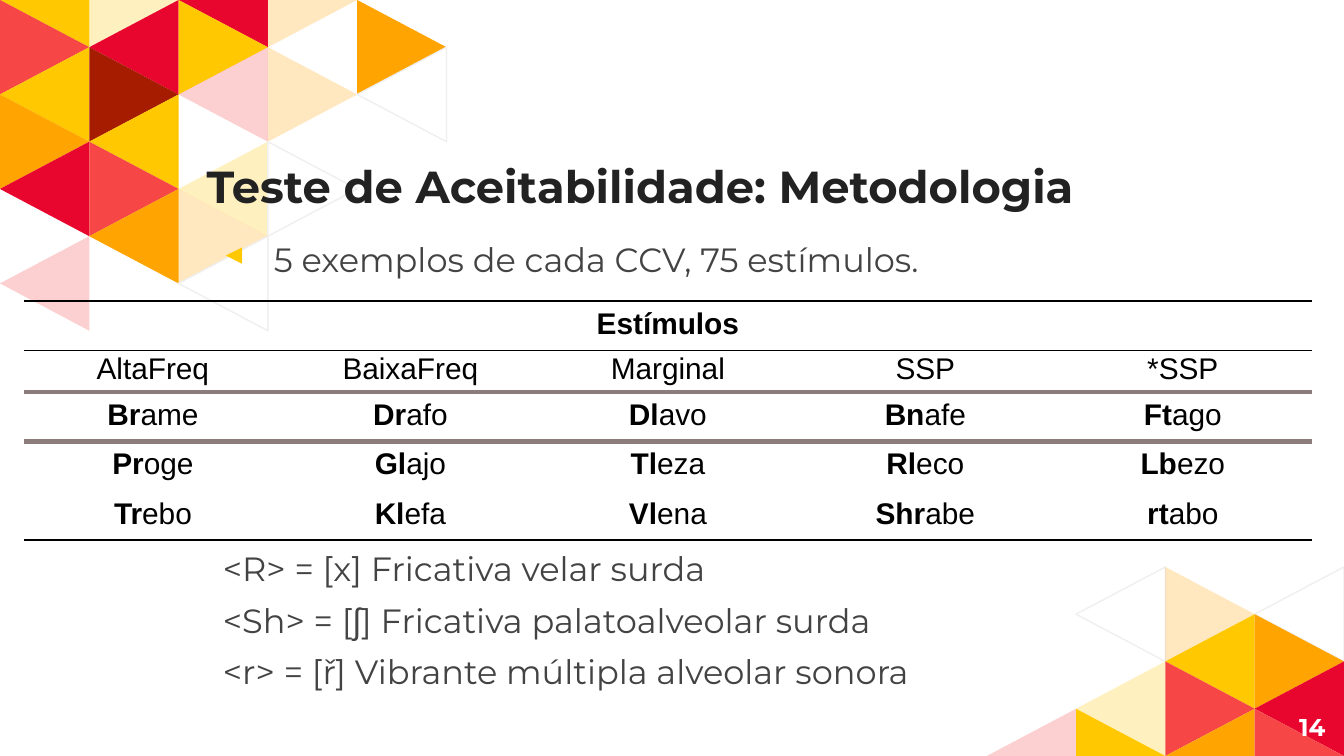
from pptx import Presentation
from pptx.dml.color import RGBColor
from pptx.enum.text import MSO_ANCHOR, PP_ALIGN
from pptx.oxml.ns import qn
from pptx.util import Inches, Pt
from lxml import etree

TOP, MIDDLE, BOTTOM = MSO_ANCHOR.TOP, MSO_ANCHOR.MIDDLE, MSO_ANCHOR.BOTTOM
LEFT, CENTER, RIGHT = PP_ALIGN.LEFT, PP_ALIGN.CENTER, PP_ALIGN.RIGHT

SLIDE_WIDTH = Inches(10)
SLIDE_HEIGHT = SLIDE_WIDTH * 9 // 16
UNIT = SLIDE_WIDTH / 100
TRIANGLE_WIDTH = SLIDE_WIDTH / 15.05
TRIANGLE_ROW = SLIDE_HEIGHT / 16

TRIANGLE_COLORS = {
    "Y": "FFC800", "O": "FFA400", "R": "F64646",
    "C": "E8062F", "D": "A61C00", "W": "FFFFFF",
}
TOP_MOSAIC = ["YyCo.", "RCY.O", "YDroW", "OY...", "CRyW.", ".Oo..", "r.W.."]
BOTTOM_MOSAIC = [".WoW", "..YO", ".yRC", "rYOR"]

HEADINGS = ["AltaFreq", "BaixaFreq", "Marginal", "SSP", "*SSP"]
STIMULI = [
    ["Br-ame", "Dr-afo", "Dl-avo", "Bn-afe", "Ft-ago"],
    ["Pr-oge", "Gl-ajo", "Tl-eza", "Rl-eco", "Lb-ezo"],
    ["Tr-ebo", "Kl-efa", "Vl-ena", "Shr-abe", "rt-abo"],
]
THIN, THICK = ("000000", 1), ("8D7C7C", 3)
ROW_BORDERS = [(THIN, THIN), (THIN, THICK), (THICK, THICK), (THICK, None), (None, THIN)]
ROW_HEIGHTS = [3.4, 3.1, 3.4, 3.4, 3.4]


def color(value):
    return RGBColor.from_string(value)


def place(box):
    return [round(length * UNIT) for length in box]


def add_run(paragraph, text, size, text_color, font="Montserrat", bold=False):
    run = paragraph.add_run()
    run.text = text
    run.font.name = font
    run.font.size = Pt(size)
    run.font.bold = bold
    run.font.color.rgb = color(text_color)


def add_text_frame(slide, box, anchor=TOP):
    frame = slide.shapes.add_textbox(*place(box)).text_frame
    frame.word_wrap = True
    frame.vertical_anchor = anchor
    frame.margin_left = frame.margin_right = Inches(0.1)
    frame.margin_top = frame.margin_bottom = Inches(0.1)
    return frame


def add_triangle(slide, points, code):
    builder = slide.shapes.build_freeform(*points[0])
    builder.add_line_segments(points[1:], close=True)
    shape = builder.convert_to_shape()
    shape.shadow.inherit = False
    shape.fill.solid()
    shape.fill.fore_color.rgb = color(TRIANGLE_COLORS[code.upper()])
    if code.islower():
        for fill_color in shape.element.spPr.iter(qn("a:srgbClr")):
            etree.SubElement(fill_color, qn("a:alpha"), val="25000")
    if code == "W":
        shape.line.color.rgb = color("EFEFEF")
        shape.line.width = Pt(0.75)
    else:
        shape.line.fill.background()


def add_mosaic(slide, left, first_row, pattern):
    for row, codes in enumerate(pattern, first_row):
        for column, code in enumerate(codes):
            if code == ".":
                continue
            points_right = (column + row) % 2 == 0
            base, tip = (column, column + 1) if points_right else (column + 1, column)
            corners = [(base, row), (base, row + 2), (tip, row + 1)]
            points = [
                (round(left + x * TRIANGLE_WIDTH), round(min(max(y, 0), 16) * TRIANGLE_ROW))
                for x, y in corners
            ]
            add_triangle(slide, points, code)


def add_title(slide, box):
    frame = add_text_frame(slide, box, BOTTOM)
    add_run(frame.paragraphs[0], "Teste de Aceitabilidade: Metodologia", 24, "222222", bold=True)


def add_body(slide, box, lines, indent, hanging=0, bullet=None):
    frame = add_text_frame(slide, box)
    for index, line in enumerate(lines):
        paragraph = frame.add_paragraph() if index else frame.paragraphs[0]
        paragraph.space_before = Pt(6)
        properties = paragraph._p.get_or_add_pPr()
        properties.set("marL", str(Inches(indent)))
        properties.set("indent", str(Inches(-hanging)))
        if bullet:
            bullet_color = etree.SubElement(properties, qn("a:buClr"))
            etree.SubElement(bullet_color, qn("a:srgbClr"), val="FFC800")
            etree.SubElement(properties, qn("a:buChar"), char=bullet)
        for text, font in line:
            add_run(paragraph, text, 18, "434343", font)


def add_page_number(slide, box):
    paragraph = add_text_frame(slide, box, MIDDLE).paragraphs[0]
    paragraph.alignment = RIGHT
    add_run(paragraph, "14", 13, "FFFFFF", bold=True)


def style_cell(cell, top, bottom):
    properties = cell._tc.get_or_add_tcPr()
    for side, border in (("L", None), ("R", None), ("T", top), ("B", bottom)):
        line = etree.SubElement(properties, qn("a:ln" + side))
        if border:
            line.set("w", str(Pt(border[1])))
            fill = etree.SubElement(line, qn("a:solidFill"))
            etree.SubElement(fill, qn("a:srgbClr"), val=border[0])
        else:
            etree.SubElement(line, qn("a:noFill"))
    cell.fill.background()


def add_cell_text(cell, bold_text, plain_text=""):
    paragraph = cell.text_frame.paragraphs[0]
    paragraph.alignment = CENTER
    for text, bold in ((bold_text, True), (plain_text, False)):
        if text:
            add_run(paragraph, text, 16, "000000", "Arial", bold)
    return paragraph


def add_stimuli_table(slide, box):
    table = slide.shapes.add_table(len(ROW_HEIGHTS), len(HEADINGS), *place(box)).table
    table.horz_banding = False
    table.first_row = False
    for row, (height, borders) in enumerate(zip(ROW_HEIGHTS, ROW_BORDERS)):
        table.rows[row].height = round(height * UNIT)
        for column in range(len(HEADINGS)):
            style_cell(table.cell(row, column), *borders)
    table.cell(0, 0).merge(table.cell(0, len(HEADINGS) - 1))
    add_cell_text(table.cell(0, 0), "Estímulos")
    for column, heading in enumerate(HEADINGS):
        cell = table.cell(1, column)
        cell.margin_left = cell.margin_right = Inches(0.07)
        cell.margin_top = cell.margin_bottom = 0
        add_cell_text(cell, "", heading).line_spacing = 1.07
    for row, words in enumerate(STIMULI, 2):
        for column, word in enumerate(words):
            add_cell_text(table.cell(row, column), *word.split("-"))


def main():
    presentation = Presentation()
    presentation.slide_width = SLIDE_WIDTH
    presentation.slide_height = SLIDE_HEIGHT
    slide = presentation.slides.add_slide(presentation.slide_layouts[6])
    add_mosaic(slide, 0, -1, TOP_MOSAIC)
    add_mosaic(slide, SLIDE_WIDTH - 4 * TRIANGLE_WIDTH, 12, BOTTOM_MOSAIC)
    add_title(slide, (14.4, 9.5, 70.6, 7.3))
    main_font = "Montserrat"
    examples = [[("5 exemplos de cada CCV, 75 estímulos.", main_font)]]
    add_body(slide, (14.4, 16.8, 83, 6.1), examples, 0.5, 0.38, "◂")
    legend = [
        [("<R> = [x] Fricativa velar surda", main_font)],
        [("<Sh> = [", main_font), ("ʃ", "Cabin"), ("] Fricativa palatoalveolar surda", main_font)],
        [("<r> = [ř] Vibrante múltipla alveolar sonora", main_font)],
    ]
    add_body(slide, (14.4, 39.8, 83, 13.5), legend, 0.12)
    add_page_number(slide, (93.6, 51.9, 6, 4.3))
    add_stimuli_table(slide, (1.8, 22.4, 95.8, sum(ROW_HEIGHTS)))
    presentation.save("out.pptx")


if __name__ == "__main__":
    main()
